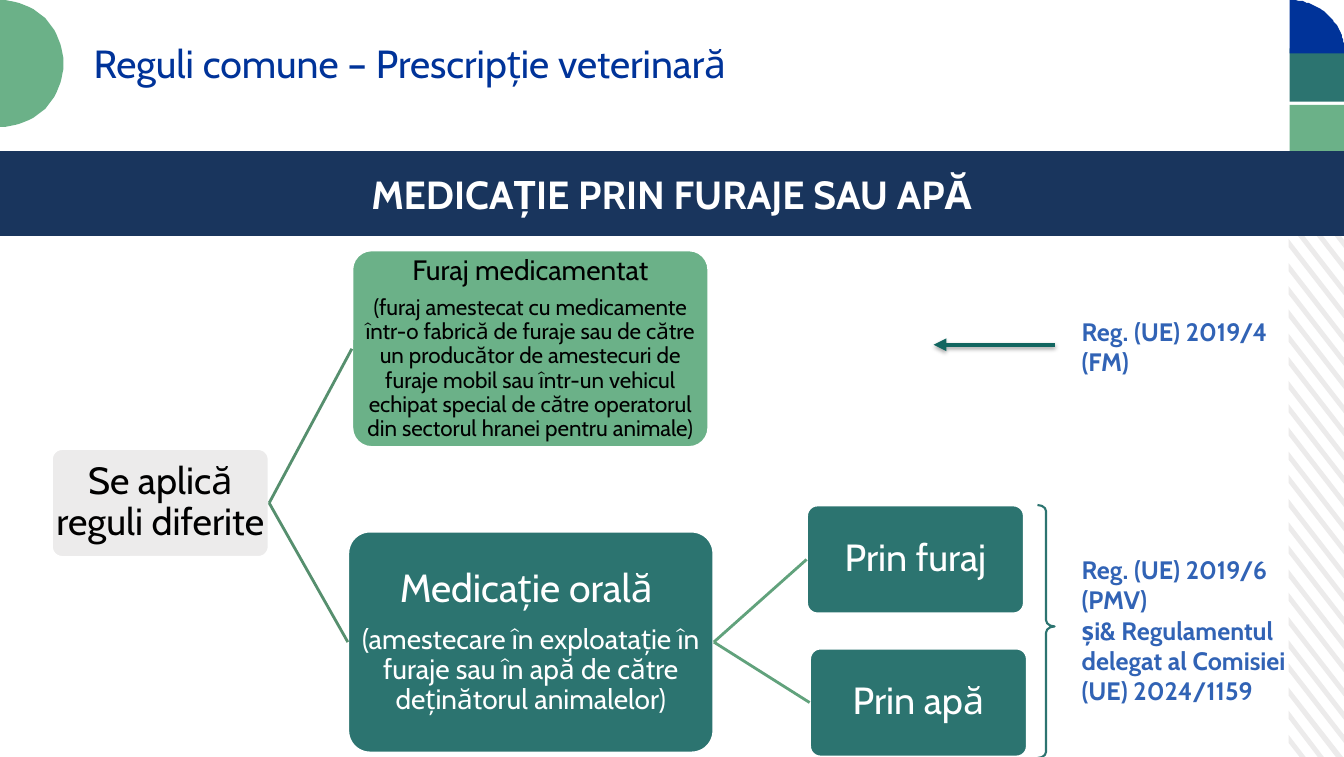
import math
from dataclasses import dataclass
from lxml import etree
from pptx import Presentation
from pptx.dml.color import RGBColor
from pptx.enum.shapes import MSO_CONNECTOR, MSO_SHAPE
from pptx.enum.text import MSO_ANCHOR, PP_ALIGN
from pptx.oxml import parse_xml
from pptx.oxml.ns import nsdecls, qn
from pptx.util import Pt

PX = 9144  # EMU per px, 100 px to the inch
SLIDE_W, SLIDE_H = 1333, 751
RECT, ROUNDED, BRACE = MSO_SHAPE.RECTANGLE, MSO_SHAPE.ROUNDED_RECTANGLE, MSO_SHAPE.RIGHT_BRACE
STRAIGHT = MSO_CONNECTOR.STRAIGHT
LEFT, CENTER = PP_ALIGN.LEFT, PP_ALIGN.CENTER
TOP, MIDDLE = MSO_ANCHOR.TOP, MSO_ANCHOR.MIDDLE
LEFT_SIDE, RIGHT_SIDE = 1, 3


@dataclass(frozen=True)
class Theme:
    font: str = "Cabin"
    white: str = "FFFFFF"
    black: str = "000000"
    blue: str = "003399"
    navy: str = "19355D"
    teal: str = "2C7470"
    green: str = "6BB188"
    grey: str = "ECEBEB"
    reference: str = "3163B5"
    arrow: str = "126660"
    branch: str = "568F6E"
    twig: str = "61A27C"
    title: int = 28
    node: int = 27
    detail: int = 20
    small: int = 16
    note: int = 18


THEME = Theme()


def emu(*lengths):
    return [length * PX for length in lengths]


def rgb(color):
    return RGBColor.from_string(color)


def paint(shape, fill=None, line=None, width=2):
    shape.shadow.inherit = False
    if fill:
        shape.fill.solid()
        shape.fill.fore_color.rgb = rgb(fill)
    else:
        shape.fill.background()
    if line:
        shape.line.color.rgb = rgb(line)
        shape.line.width = Pt(width)
    else:
        shape.line.fill.background()
    return shape


def write(shape, lines, color, align=LEFT, anchor=TOP, bold=False, tight=False):
    """Fill a shape with (text, size) lines; tight sets the diagram spacing."""
    frame = shape.text_frame
    frame.word_wrap = True
    frame.vertical_anchor = anchor
    if tight:
        frame.margin_left = frame.margin_right = PX
        frame.margin_top = frame.margin_bottom = PX
    for index, (text, size) in enumerate(lines):
        paragraph = frame.paragraphs[0] if index == 0 else frame.add_paragraph()
        paragraph.text = text
        paragraph.alignment = align
        font = paragraph.font
        font.name, font.size, font.bold = THEME.font, Pt(size), bold
        font.color.rgb = rgb(color)
        if tight:
            paragraph.line_spacing = 0.9
            paragraph.space_after = Pt(round(size * 0.35))


def text_box(slide, box, lines, color, bold=False):
    write(slide.shapes.add_textbox(*emu(*box)), lines, color, bold=bold)


def outline(slide, contours, fill):
    builder = None
    for first, *rest in contours:
        if builder is None:
            builder = slide.shapes.build_freeform(*first, scale=PX)
        else:
            builder.move_to(*first)
        builder.add_line_segments(rest, close=True)
    return paint(builder.convert_to_shape(), fill)


def arc(center_x, center_y, radius_x, radius_y, start, end, steps=40):
    angles = [math.radians(start + (end - start) * i / steps) for i in range(steps + 1)]
    return [(center_x + radius_x * math.cos(a), center_y + radius_y * math.sin(a)) for a in angles]


def link(slide, start, end, color, width=2):
    line = slide.shapes.add_connector(STRAIGHT, *emu(*start, *end))
    line.line.color.rgb = rgb(color)
    line.line.width = Pt(width)
    etree.SubElement(line._element.spPr, qn("a:effectLst"))
    return line


def stripes(slide, box, pitch=23.4, thickness=8, rise=71):
    left, top, width, height = box
    bottom = top + height

    def edge_end(y):
        reach = min(1, (bottom - y) / rise)
        return left + width * reach, y + rise * reach

    contours = []
    for row in range(25):
        upper = top + pitch * row
        lower = upper + thickness
        contours.append([(left, upper), edge_end(upper), edge_end(lower), (left, lower)])
    outline(slide, contours, THEME.grey)


def corner_blocks(slide, box):
    left, top, width, height = box
    block = height / 3
    quarter = arc(left, top + block, width, block, -90, 0)
    for row, color in ((1, THEME.teal), (2, THEME.green)):
        y = top + (row * 53 - 5 if row == 1 else row * block - 2)
        paint(slide.shapes.add_shape(RECT, *[round(v) for v in emu(left, y, width, block)]), color)
    outline(slide, [[(left, top + block)] + quarter], THEME.blue)


def header(slide, box):
    left, top, width, _ = box
    corner_blocks(slide, (left + width - 54, top, 55, 159))
    outline(slide, [arc(left, top + 63, 63, 63, -90, 90)], THEME.green)
    banner = paint(slide.shapes.add_shape(RECT, *emu(left - 2, top + 150, width + 3, 84)), THEME.navy)
    write(banner, [("MEDICAȚIE PRIN FURAJE SAU APĂ", THEME.title)], THEME.white, CENTER, MIDDLE, True)
    text_box(slide, (left + 83, top + 34, 876, 58),
             [("Reguli comune – Prescripție veterinară", THEME.title)], THEME.blue)


def rule_tree(slide, box):
    left, top, _, _ = box

    def node(place, fill, color, lines):
        x, y, width, height = place
        card = slide.shapes.add_shape(ROUNDED, *emu(left + x, top + y, width, height))
        card.adjustments[0] = 0.1
        paint(card, fill, THEME.white)
        write(card, lines, color, CENTER, MIDDLE, tight=True)
        return card

    def join(parent, child, color):
        line = link(slide, (0, 0), (0, 0), color)
        line.begin_connect(parent, RIGHT_SIDE)
        line.end_connect(child, LEFT_SIDE)

    root = node((0, 197, 216, 108), THEME.grey, THEME.black,
                [("Se aplică reguli diferite ", THEME.node)])
    medicated_feed = node((298, 0, 354, 196), THEME.green, THEME.black, [
        ("Furaj medicamentat", THEME.detail),
        ("(furaj amestecat cu medicamente într-o fabrică de furaje sau de către un producător "
         "de amestecuri de furaje mobil sau într-un vehicul echipat special de către operatorul "
         "din sectorul hranei pentru animale)", THEME.small)])
    oral = node((294, 279, 363, 220), THEME.teal, THEME.white, [
        ("Medicație orală ", THEME.title),
        ("(amestecare în exploatație în furaje sau în apă de către deținătorul animalelor)",
         THEME.detail)])
    via_feed = node((749, 253, 216, 108), THEME.teal, THEME.white, [("Prin furaj", THEME.node)])
    via_water = node((752, 395, 216, 108), THEME.teal, THEME.white, [("Prin apă", THEME.node)])
    for parent, child, color in ((root, medicated_feed, THEME.branch), (root, oral, THEME.branch),
                                 (oral, via_feed, THEME.twig), (oral, via_water, THEME.twig)):
        join(parent, child, color)


def references(slide, box):
    left, top, _, _ = box
    # Regulation texts
    for y, height, lines in (
            (0, 71, ("Reg. (UE) 2019/4", "(FM)")),
            (236, 162, ("Reg. (UE) 2019/6 (PMV)",
                        "și& Regulamentul delegat al Comisiei (UE) 2024/1159"))):
        text_box(slide, (left + 137, top + y, 229, height),
                 [(line, THEME.note) for line in lines], THEME.reference, bold=True)
    # Arrow to medicated feed
    arrow = link(slide, (left + 120, top + 33), (left, top + 33), THEME.arrow, 3)
    etree.SubElement(arrow.line._get_or_add_ln(), qn("a:tailEnd"), type="triangle")
    arrow._element.spPr.find(qn("a:effectLst")).append(parse_xml(
        f'<a:outerShdw {nsdecls("a")} blurRad="39400" dist="22900" dir="5400000" rotWithShape="0">'
        '<a:srgbClr val="000000"><a:alpha val="35000"/></a:srgbClr></a:outerShdw>'))
    # Brace around the two oral routes
    brace = slide.shapes.add_shape(BRACE, *emu(left + 103, top + 192, 17, 251))
    brace.adjustments[0], brace.adjustments[1] = 0.36, 0.48
    paint(brace, line=THEME.teal, width=1.5)


def main():
    deck = Presentation()
    deck.slide_width, deck.slide_height = emu(SLIDE_W, SLIDE_H)
    slide = deck.slides.add_slide(deck.slide_layouts[6])
    stripes(slide, (1278, 167, 55, 584))
    header(slide, (0, 0, SLIDE_W, 234))
    rule_tree(slide, (51, 248, 968, 503))
    references(slide, (926, 309, 366, 443))
    deck.save("out.pptx")


if __name__ == "__main__":
    main()
